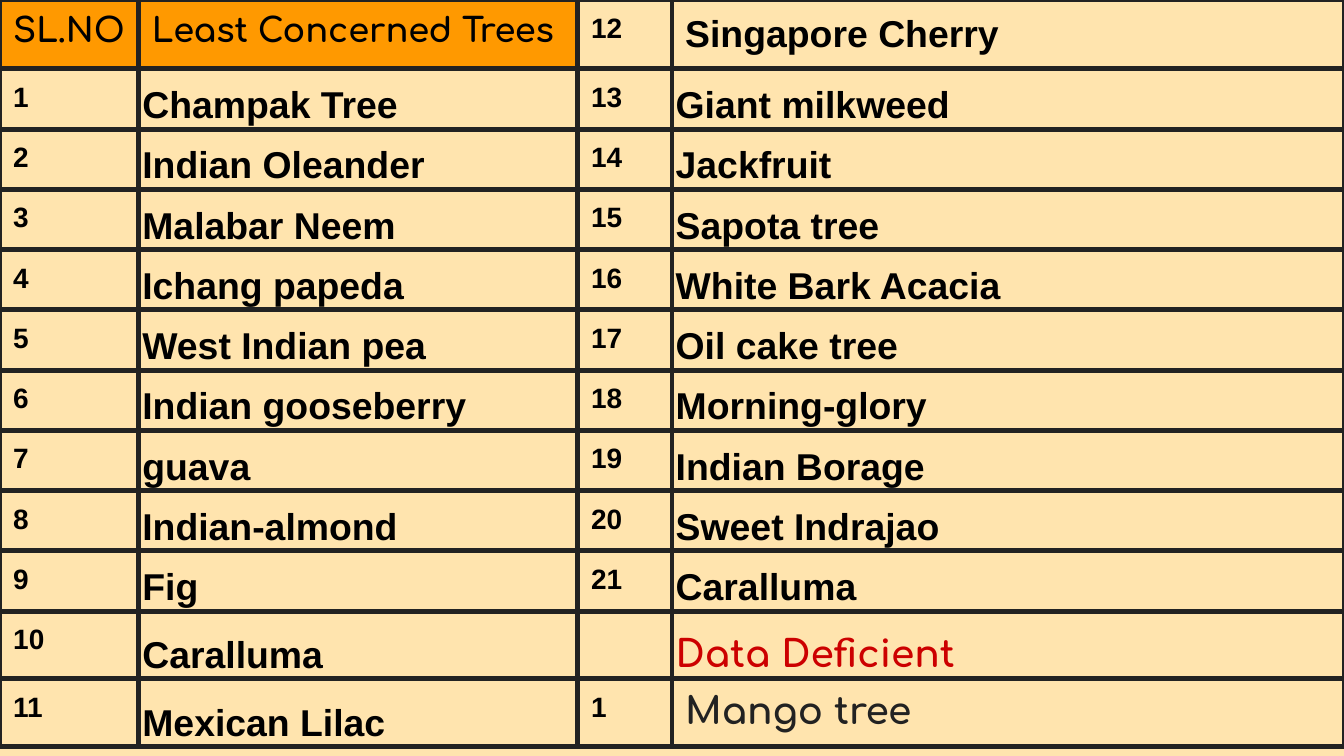
from dataclasses import dataclass

from lxml.etree import SubElement
from pptx import Presentation
from pptx.dml.color import RGBColor
from pptx.enum.text import MSO_ANCHOR
from pptx.oxml.ns import qn
from pptx.util import Cm, Pt


@dataclass(frozen=True)
class Theme:
    background: str = "FFE4AE"
    header_fill: str = "FF9900"
    border: str = "222222"
    ink: str = "000000"
    alert: str = "CC0000"
    body_font: str = "Arial"
    display_font: str = "Comfortaa"
    header_size: int = 18
    number_size: int = 15
    name_size: int = 20
    border_width: int = 3


THEME = Theme()
COLUMN_WIDTHS = (2.62, 8.3, 1.78, 12.7)
ROW_HEIGHTS = (1.3, *[1.14] * 10, 1.22)
LEFT_TREES = (
    "Champak Tree", "Indian Oleander", "Malabar Neem", "Ichang papeda",
    "West Indian pea", "Indian gooseberry", "guava", "Indian-almond",
    "Fig", "Caralluma", "Mexican Lilac",
)
RIGHT_TREES = (
    "Singapore Cherry", "Giant milkweed", "Jackfruit", "Sapota tree",
    "White Bark Acacia", "Oil cake tree", "Morning-glory", "Indian Borage",
    "Sweet Indrajao", "Caralluma",
)


def add_borders(cell):
    properties = cell._tc.get_or_add_tcPr()
    for side in ("lnL", "lnR", "lnT", "lnB"):
        line = SubElement(properties, qn(f"a:{side}"), w=str(Pt(THEME.border_width)))
        solid = SubElement(line, qn("a:solidFill"))
        SubElement(solid, qn("a:srgbClr"), val=THEME.border)


def set_margins(cell, horizontal, vertical):
    cell.margin_left = cell.margin_right = Cm(horizontal)
    cell.margin_top = cell.margin_bottom = Cm(vertical)


def write(cell, text, size, font=THEME.body_font, color=THEME.ink):
    span = cell.text_frame.paragraphs[0].add_run()
    span.text = text
    span.font.size = Pt(size)
    span.font.name = font
    span.font.bold = True
    span.font.color.rgb = RGBColor.from_string(color)


def seat_low(cell):
    """Set the text close to the left and bottom borders."""
    set_margins(cell, 0.07, 0.05)
    cell.vertical_anchor = MSO_ANCHOR.BOTTOM


def write_header(cell, text):
    write(cell, text, THEME.header_size, THEME.display_font)
    cell.fill.solid()
    cell.fill.fore_color.rgb = RGBColor.from_string(THEME.header_fill)


def write_tree(table, row, column, number, name, low=True):
    write(table.cell(row, column), str(number), THEME.number_size)
    cell = table.cell(row, column + 1)
    write(cell, name, THEME.name_size)
    if low:
        seat_low(cell)
        cell.text_frame.paragraphs[0].line_spacing = 1.15


def add_grid(page):
    frame = page.shapes.add_table(
        len(ROW_HEIGHTS), len(COLUMN_WIDTHS), 0, 0,
        Cm(sum(COLUMN_WIDTHS)), Cm(sum(ROW_HEIGHTS)))
    table = frame.table
    table.first_row = table.horz_banding = False
    for column, width in zip(table.columns, COLUMN_WIDTHS):
        column.width = Cm(width)
    for row, height in zip(table.rows, ROW_HEIGHTS):
        row.height = Cm(height)
    for cell in table.iter_cells():
        add_borders(cell)
        cell.fill.background()
        set_margins(cell, 0.25, 0.25)
    return table


def fill_trees(table):
    write_header(table.cell(0, 0), "SL.NO")
    write_header(table.cell(0, 1), "Least Concerned Trees")
    for number, name in enumerate(LEFT_TREES, start=1):
        write_tree(table, number, 0, number, name)
    for row, name in enumerate(RIGHT_TREES):
        write_tree(table, row, 2, row + len(LEFT_TREES) + 1, name, low=row > 0)


def fill_data_deficient(table):
    heading_row = len(RIGHT_TREES)
    heading = table.cell(heading_row, 3)
    write(heading, "Data Deficient", THEME.name_size, THEME.display_font, THEME.alert)
    seat_low(heading)
    write(table.cell(heading_row + 1, 2), "1", THEME.number_size)
    write(table.cell(heading_row + 1, 3), "Mango tree",
          THEME.name_size, THEME.display_font, THEME.border)


def main():
    deck = Presentation()
    deck.slide_width, deck.slide_height = Cm(25.4), Cm(14.29)
    page = deck.slides.add_slide(deck.slide_layouts[6])
    page.background.fill.solid()
    page.background.fill.fore_color.rgb = RGBColor.from_string(THEME.background)
    table = add_grid(page)
    fill_trees(table)
    fill_data_deficient(table)
    deck.save("out.pptx")


if __name__ == "__main__":
    main()
